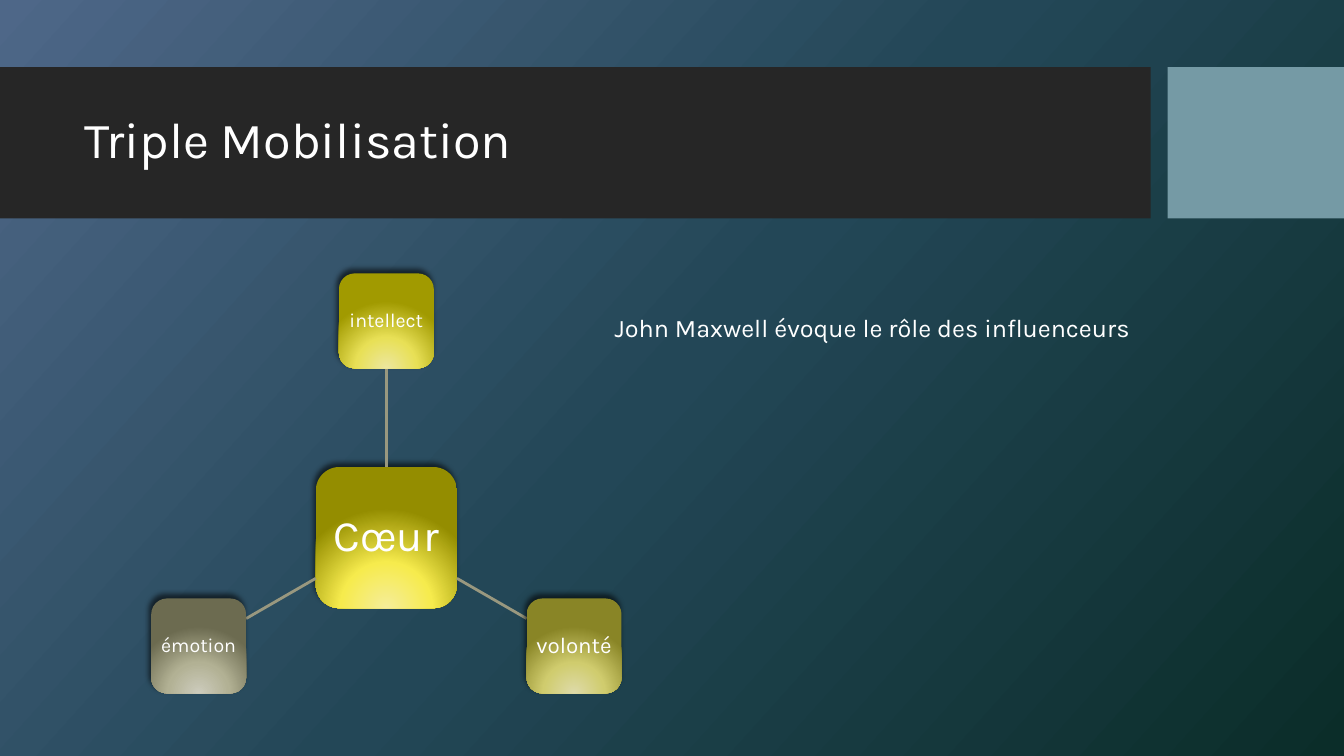
"""Build the slide "Triple Mobilisation": a heart hub linked to three faculties."""
import math

import lxml.etree
import pptx
import pptx.dml.color
import pptx.enum.shapes
import pptx.enum.text
import pptx.oxml.ns
import pptx.util

TITLE = "Triple Mobilisation"
REMARK = "John Maxwell évoque le rôle des influenceurs"
HUB = ("Cœur", 31, ["F5ED9A", "F6EB4D", "948D00"])
SATELLITES = [
    ("intellect", 14, -90, ["ECE79F", "E8E056", "A19A00"]),
    ("volonté", 16, 30, ["DEDBAA", "D0CC6E", "898526"]),
    ("émotion", 14, 150, ["CDCCBD", "B2B194", "6C6B50"]),
]
BANDS = [((0, 8, 137, 18), "262626"), ((139, 8, 21, 18), "759AA5")]
BACKGROUND = ["4E6788", "234757", "0B2D29"]
FONT, WHITE, LINK = "Karla", "FFFFFF", "99987F"

COLUMNS, ROWS = 160, 90
CELL = pptx.util.Inches(7.5) / ROWS
TITLE_AREA = (8.9, 9.8, 126.1, 14.2)
REMARK_AREA = (72, 36.6, 64.2, 4.8)
CENTRE = (46, 64)
HUB_SIZE, SATELLITE_SIZE, RADIUS = 16.8, 11.3, 25.8
HUB_INSET, SATELLITE_INSET = 1.1, 0.5

LINEAR = '<a:lin ang="2520000" scaled="0"/>'
GLOW = '<a:path path="circle"><a:fillToRect l="50000" t="155000" r="50000" b="-55000"/></a:path>'
SHADOW = ('<a:outerShdw blurRad="50800" dist="38100" dir="14700000" rotWithShape="0">'
          '<a:srgbClr val="000000"><a:alpha val="60000"/></a:srgbClr></a:outerShdw>')


def cells(*counts):
    return [pptx.util.Emu(round(count * CELL)) for count in counts]


def colour(value):
    return pptx.dml.color.RGBColor.from_string(value)


def parse_xml(tag, inner):
    namespace = pptx.oxml.ns.nsdecls("a")
    return lxml.etree.fromstring(f"<a:{tag} {namespace}>{inner}</a:{tag}>")


def paint_gradient(fill, owner, colours, course):
    fill.gradient()
    gradient = next(owner.iter(pptx.oxml.ns.qn("a:gradFill")))
    stops = "".join(
        f'<a:gs pos="{place}"><a:srgbClr val="{value}"/></a:gs>'
        for place, value in zip((0, 46000 if course == GLOW else 50000, 100000), colours))
    fresh = parse_xml("gradFill", f"<a:gsLst>{stops}</a:gsLst>{course}")
    gradient[:] = list(fresh)


def write(box, text, size, align="LEFT", anchor="MIDDLE", spacing=0.9, wrap=True, inset=None):
    frame = box.text_frame
    frame.word_wrap = wrap
    frame.vertical_anchor = pptx.enum.text.MSO_ANCHOR[anchor]
    if inset is not None:
        margin = cells(inset)[0]
        frame.margin_left = frame.margin_right = margin
        frame.margin_top = frame.margin_bottom = margin
    para = frame.paragraphs[0]
    para.alignment = pptx.enum.text.PP_ALIGN[align]
    para.line_spacing = spacing
    span = para.add_run()
    span.text = text
    span.font.name = FONT
    span.font.size = pptx.util.Pt(size)
    span.font.color.rgb = colour(WHITE)


def add_tile(page, centre, size, colours, text, points, inset):
    left, top = (value - size / 2 for value in centre)
    tile = page.shapes.add_shape(
        pptx.enum.shapes.MSO_SHAPE.ROUNDED_RECTANGLE, *cells(left, top, size, size))
    tile.line.fill.background()
    tile.shadow.inherit = False
    paint_gradient(tile.fill, tile.element, colours, GLOW)
    effects = next(tile.element.iter(pptx.oxml.ns.qn("a:effectLst")))
    effects.extend(parse_xml("effectLst", SHADOW))
    write(tile, text, points, align="CENTER", wrap=False, inset=inset)


def add_link(page, angle):
    across, down = math.cos(angle), math.sin(angle)
    reach = 2 * max(abs(across), abs(down))
    start, end = HUB_SIZE / reach, RADIUS - SATELLITE_SIZE / reach
    ends = [middle + distance * share for distance in (start, end)
            for middle, share in zip(CENTRE, (across, down))]
    link = page.shapes.add_connector(pptx.enum.shapes.MSO_CONNECTOR.STRAIGHT, *cells(*ends))
    link.line.color.rgb = colour(LINK)
    link.line.width = pptx.util.Pt(2)
    link.element.spPr.append(parse_xml("effectLst", ""))


def main():
    deck = pptx.Presentation()
    deck.slide_width, deck.slide_height = cells(COLUMNS, ROWS)
    page = deck.slides.add_slide(deck.slide_layouts[5])
    paint_gradient(page.background.fill, page.element, BACKGROUND, LINEAR)

    title = page.shapes.title
    title.left, title.top, title.width, title.height = cells(*TITLE_AREA)
    write(title, TITLE, 36)
    for area, shade in BANDS:
        band = page.shapes.add_shape(pptx.enum.shapes.MSO_SHAPE.RECTANGLE, *cells(*area))
        band.fill.solid()
        band.fill.fore_color.rgb = colour(shade)
        band.line.fill.background()
        band.shadow.inherit = False
        title.element.addprevious(band.element)

    text, points, colours = HUB
    add_tile(page, CENTRE, HUB_SIZE, colours, text, points, HUB_INSET)
    for text, points, degrees, colours in SATELLITES:
        angle = math.radians(degrees)
        add_link(page, angle)
        spot = (CENTRE[0] + RADIUS * math.cos(angle), CENTRE[1] + RADIUS * math.sin(angle))
        add_tile(page, spot, SATELLITE_SIZE, colours, text, points, SATELLITE_INSET)

    remark = page.shapes.add_textbox(*cells(*REMARK_AREA))
    write(remark, REMARK, 18, anchor="TOP", spacing=1.0, wrap=False)
    remark.text_frame.auto_size = pptx.enum.text.MSO_AUTO_SIZE.SHAPE_TO_FIT_TEXT
    deck.save("out.pptx")


if __name__ == "__main__":
    main()
